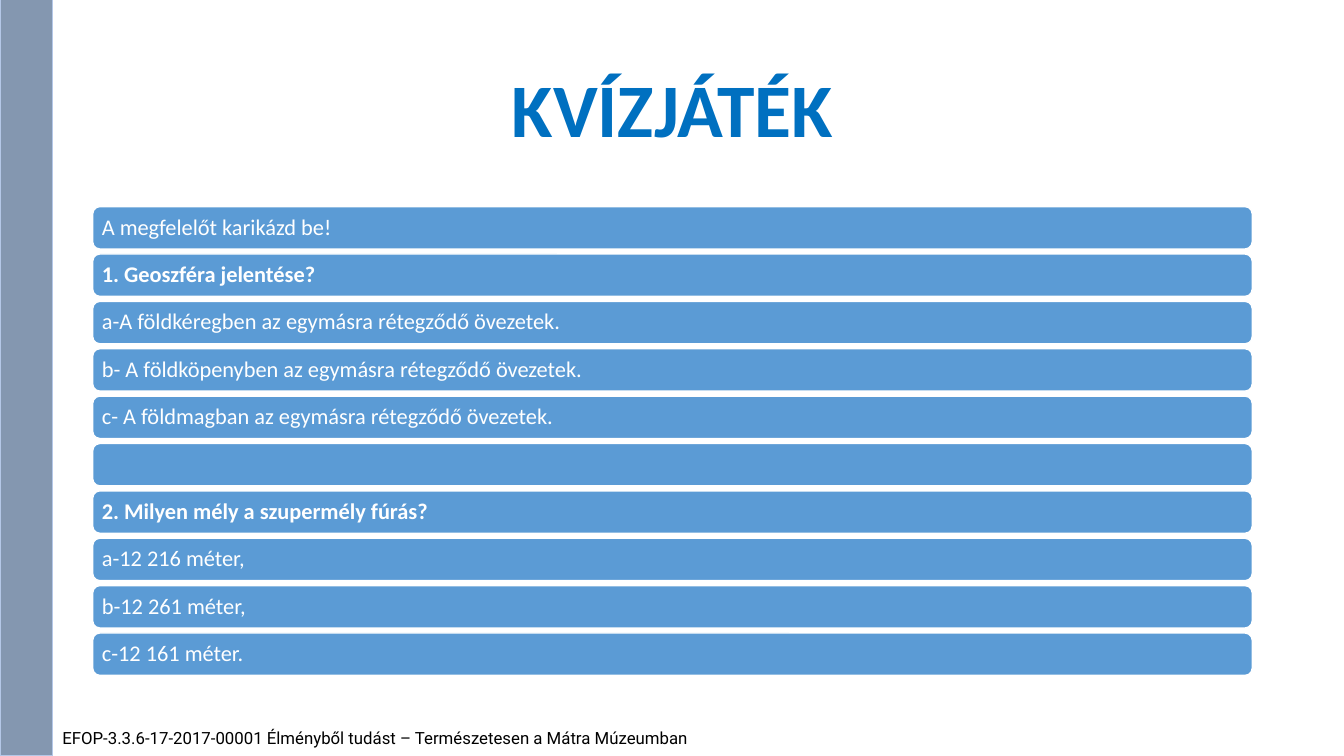
from dataclasses import dataclass

from pptx import Presentation
from pptx.dml.color import RGBColor
from pptx.enum.shapes import MSO_SHAPE
from pptx.enum.text import MSO_ANCHOR, PP_ALIGN
from pptx.util import Inches, Pt

RECTANGLE = MSO_SHAPE.RECTANGLE
ROUNDED = MSO_SHAPE.ROUNDED_RECTANGLE
MIDDLE, TOP = MSO_ANCHOR.MIDDLE, MSO_ANCHOR.TOP
LEFT, CENTER = PP_ALIGN.LEFT, PP_ALIGN.CENTER
TITLE_ONLY = 5


@dataclass(frozen=True)
class Theme:
    title: str = "0070C0"
    bar: str = "5B9BD5"
    light: str = "FFFFFF"
    dark: str = "000000"
    stripe: str = "8497B0"
    stripe_edge: str = "B4C7E7"
    font: str = "Calibri"
    footer_font: str = "Roboto"
    title_size: int = 54
    bar_size: int = 16
    footer_size: int = 12


class SlideBuilder:
    def __init__(self, slide, theme):
        self.slide = slide
        self.theme = theme

    def add_line(self, frame, text, size, color, font, bold=False,
                 align=LEFT, anchor=MIDDLE, spacing=0.9):
        frame.word_wrap = True
        frame.vertical_anchor = anchor
        paragraph = frame.paragraphs[0]
        paragraph.alignment = align
        paragraph.line_spacing = spacing
        run = paragraph.add_run()
        run.text = text
        run.font.size = Pt(size)
        run.font.name = font
        run.font.bold = bold
        run.font.color.rgb = RGBColor.from_string(color)

    def title(self, text, box):
        heading = self.slide.shapes.title
        heading.left, heading.top, heading.width, heading.height = map(Inches, box)
        self.add_line(heading.text_frame, text, self.theme.title_size,
                      self.theme.title, self.theme.font, True, CENTER)

    def panel(self, preset, box, fill, edge, edge_width):
        panel = self.slide.shapes.add_shape(preset, *map(Inches, box))
        panel.shadow.inherit = False
        panel.fill.solid()
        panel.fill.fore_color.rgb = RGBColor.from_string(fill)
        panel.line.color.rgb = RGBColor.from_string(edge)
        panel.line.width = Pt(edge_width)
        return panel

    def quiz_bar(self, text, box, bold):
        bar = self.panel(ROUNDED, box, self.theme.bar, self.theme.light, 1)
        frame = bar.text_frame
        frame.margin_left = frame.margin_right = Inches(0.07)
        frame.margin_top = frame.margin_bottom = Inches(0.05)
        if text:
            self.add_line(frame, text, self.theme.bar_size, self.theme.light,
                          self.theme.font, bold)

    def footer(self, text, box):
        note = self.slide.shapes.add_textbox(*map(Inches, box))
        self.add_line(note.text_frame, text, self.theme.footer_size, self.theme.dark,
                      self.theme.footer_font, anchor=TOP, spacing=1.0)


QUIZ_LINES = [
    ("A megfelelőt karikázd be!", False),
    ("1. Geoszféra jelentése?", True),
    ("a-A földkéregben az egymásra rétegződő övezetek.", False),
    ("b- A földköpenyben az egymásra rétegződő övezetek.", False),
    ("c- A földmagban az egymásra rétegződő övezetek.", False),
    ("", False),
    ("2. Milyen mély a szupermély fúrás?", True),
    ("a-12 216 méter,", False),
    ("b-12 261 méter,", False),
    ("c-12 161 méter.", False),
]
BAR_LEFT, BAR_TOP, BAR_WIDTH, BAR_HEIGHT, BAR_PITCH = 0.92, 2.05, 11.5, 0.42, 0.47


def main():
    deck = Presentation()
    deck.slide_width, deck.slide_height = Inches(13.33), Inches(7.5)
    slide = deck.slides.add_slide(deck.slide_layouts[TITLE_ONLY])
    theme = Theme()
    builder = SlideBuilder(slide, theme)

    builder.title("KVÍZJÁTÉK", (BAR_LEFT, 0.4, BAR_WIDTH, 1.45))
    for row, (text, is_question) in enumerate(QUIZ_LINES):
        top = BAR_TOP + row * BAR_PITCH
        builder.quiz_bar(text, (BAR_LEFT, top, BAR_WIDTH, BAR_HEIGHT), is_question)
    builder.panel(RECTANGLE, (0, 0, 0.52, 7.5), theme.stripe, theme.stripe_edge, 0.75)
    builder.footer(
        "EFOP-3.3.6-17-2017-00001 Élményből tudást – Természetesen a Mátra Múzeumban",
        (0.52, 7.17, 8.3, 0.33))

    deck.save("out.pptx")


if __name__ == "__main__":
    main()
